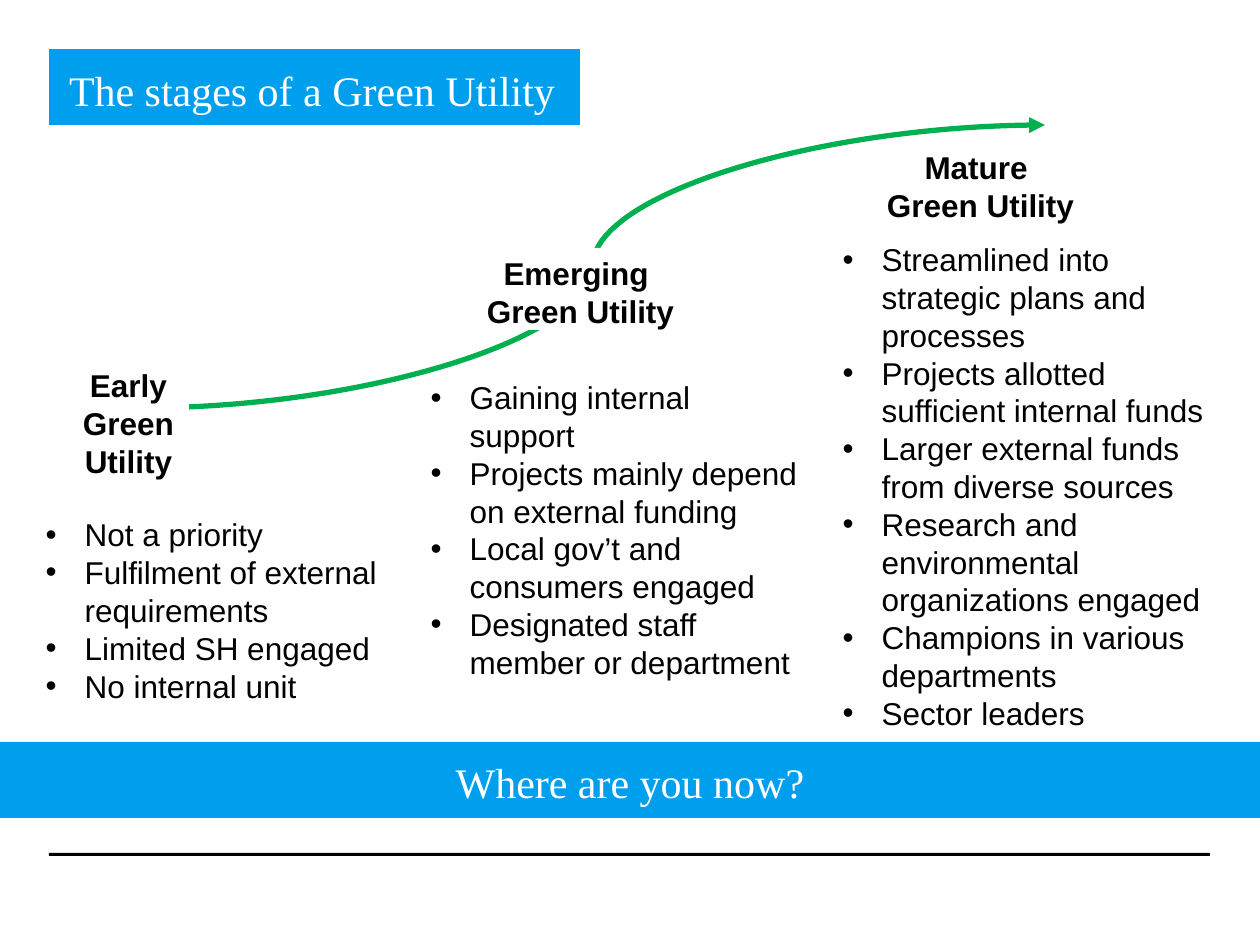
from dataclasses import dataclass
from typing import Optional

from lxml.etree import SubElement
from pptx import Presentation
from pptx.dml.color import RGBColor
from pptx.enum.shapes import MSO_CONNECTOR, MSO_SHAPE
from pptx.enum.text import MSO_ANCHOR, MSO_AUTO_SIZE, PP_ALIGN
from pptx.oxml.ns import qn
from pptx.util import Emu, Pt

PX_PER_INCH = 126
COLORS = {"blue": "009FEE", "green": "00B050", "white": "FFFFFF", "black": "000000"}
BULLET_INDENT = 39


@dataclass
class Box:
    left: int
    top: int
    width: int
    height: int


@dataclass
class Stage:
    label: list[str]
    label_box: Box
    label_fill: Optional[str]
    points: list[str]
    points_box: Box
    placeholder: int


STAGES = [
    Stage(["Early Green Utility"], Box(68, 360, 121, 96), "white",
          ["Not a priority", "Fulfilment of external requirements",
           "Limited SH engaged", "No internal unit"],
          Box(33, 509, 388, 204), 2),
    Stage(["Emerging ", "Green Utility"], Box(445, 248, 271, 82), "white",
          ["Gaining internal support", "Projects mainly depend on external funding",
           "Local gov’t and consumers engaged", "Designated staff member or department"],
          Box(418, 372, 397, 318), 3),
    Stage(["Mature ", "Green Utility"], Box(845, 142, 271, 82), None,
          ["Streamlined into strategic plans and processes",
           "Projects allotted sufficient internal funds",
           "Larger external funds from diverse sources",
           "Research and environmental organizations engaged",
           "Champions in various departments", "Sector leaders"],
          Box(830, 234, 415, 509), 4),
]


def px(length: int) -> Emu:
    return Emu(round(length * 914400 / PX_PER_INCH))


def color(name: str) -> RGBColor:
    return RGBColor.from_string(COLORS[name])


def place(shape, box: Box) -> None:
    shape.left, shape.top = px(box.left), px(box.top)
    shape.width, shape.height = px(box.width), px(box.height)


def paint(shape, fill: Optional[str]) -> None:
    if fill:
        shape.fill.solid()
        shape.fill.fore_color.rgb = color(fill)
    else:
        shape.fill.background()


def add_rectangle(slide, box: Box, fill: Optional[str]):
    shape = slide.shapes.add_shape(MSO_SHAPE.RECTANGLE, 0, 0, 0, 0)
    place(shape, box)
    paint(shape, fill)
    shape.line.fill.background()
    shape.shadow.inherit = False
    return shape


def add_bullet(paragraph) -> None:
    properties = paragraph._p.get_or_add_pPr()
    properties.set("marL", str(px(BULLET_INDENT)))
    properties.set("indent", str(-px(BULLET_INDENT)))
    SubElement(properties, qn("a:buFont")).set("typeface", "Arial")
    SubElement(properties, qn("a:buChar")).set("char", "•")


def write(shape, lines: list[str], align=PP_ALIGN.LEFT, size: int = 18,
          font: str = "Arial", ink: str = "black", bold: bool = False,
          bullets: bool = False) -> None:
    frame = shape.text_frame
    frame.word_wrap = True
    frame.auto_size = MSO_AUTO_SIZE.NONE
    frame.vertical_anchor = MSO_ANCHOR.TOP
    for index, line in enumerate(lines):
        paragraph = frame.add_paragraph() if index else frame.paragraphs[0]
        if bullets:
            add_bullet(paragraph)
        paragraph.alignment = align
        paragraph.space_before = Pt(0)
        paragraph.line_spacing = Pt(size * 1.2) if font == "Arial" else 1.0
        run = paragraph.add_run()
        run.text = line
        run.font.name = font
        run.font.size = Pt(size)
        run.font.bold = bold
        run.font.color.rgb = color(ink)


def write_banner(shape, text: str, align) -> None:
    paint(shape, "blue")
    write(shape, [text], align, size=24, font="Times New Roman", ink="white")
    frame = shape.text_frame
    frame.margin_left = frame.margin_right = px(20)
    frame.margin_top, frame.margin_bottom = px(15), px(10)


def add_growth_curve(slide) -> None:
    curve = slide.shapes.add_connector(
        MSO_CONNECTOR.CURVE, px(140), px(408), px(1045), px(125))
    curve.line.color.rgb = color("green")
    curve.line.width = Pt(3)
    SubElement(curve.line._get_or_add_ln(), qn("a:tailEnd")).set("type", "triangle")
    SubElement(curve._element.spPr, qn("a:effectLst"))


def add_stage(slide, stage: Stage) -> None:
    label = add_rectangle(slide, stage.label_box, stage.label_fill)
    write(label, stage.label, PP_ALIGN.CENTER, bold=True)
    points = slide.placeholders[stage.placeholder]
    place(points, stage.points_box)
    write(points, stage.points, bullets=True)


def main() -> None:
    presentation = Presentation()
    presentation.slide_width, presentation.slide_height = px(1260), px(945)
    slide = presentation.slides.add_slide(presentation.slide_layouts[4])
    unused = slide.placeholders[1]._element
    unused.getparent().remove(unused)

    # Footer rule and title
    add_rectangle(slide, Box(49, 853, 1161, 3), "black")
    title = slide.shapes.title
    place(title, Box(49, 49, 531, 76))
    write_banner(title, "The stages of a Green Utility", PP_ALIGN.LEFT)

    # Closing question
    question = add_rectangle(slide, Box(0, 742, 1260, 76), "blue")
    write_banner(question, "Where are you now?", PP_ALIGN.CENTER)

    # Growth curve, with the stages in front of it
    add_growth_curve(slide)
    for stage in STAGES:
        add_stage(slide, stage)

    presentation.save("out.pptx")


if __name__ == "__main__":
    main()
